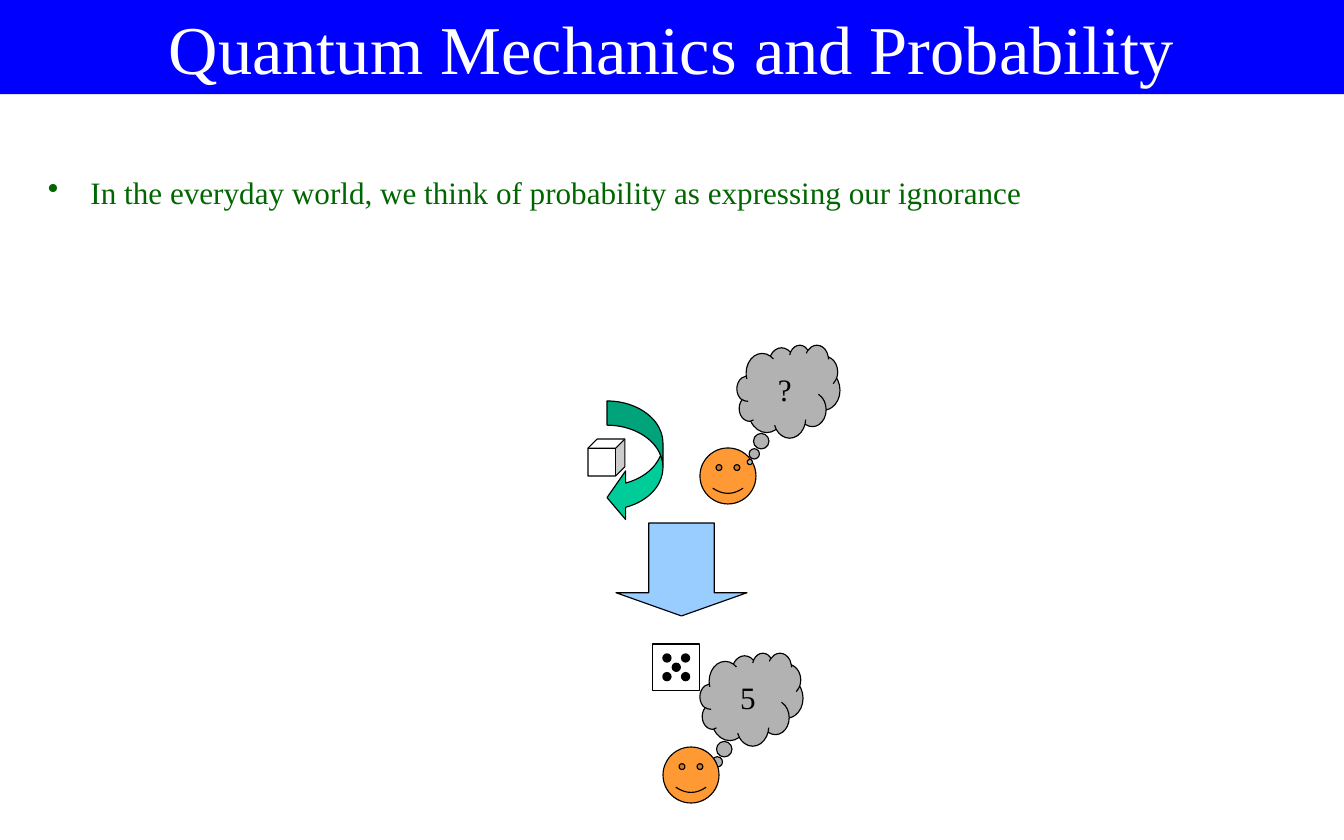
import pptx
import pptx.util
import pptx.dml.color
import pptx.enum.shapes
import pptx.enum.text
import lxml.etree

WIDTH, HEIGHT = 12, 7.5
FONT = "Times New Roman"
TITLE = "Quantum Mechanics and Probability"
STATEMENT = "In the everyday world, we think of probability as expressing our ignorance"
BLACK, WHITE = "000000", "FFFFFF"
KIND = pptx.enum.shapes.MSO_SHAPE
INCH = pptx.util.Inches

DIE_LEFT, DIE_TOP, DIE_STEP = 5.83, 5.75, 1 / 12
FIVE_PIPS = [(1, 1), (3, 1), (1, 3), (2, 2), (3, 3)]

SMILE = (KIND.SMILEY_FACE, 0.5, 0.5, "FF9933", [0.047])
THOUGHT = (KIND.CLOUD_CALLOUT, 0.92, 0.83, "B2B2B2", [-0.375, 0.76])
ROLL = (KIND.CURVED_LEFT_ARROW, 0.5, 1.08, "00CC99", [0.433, 0.867, 0.333])
CUBE = (KIND.CUBE, 0.33, 0.33, WHITE, [0.25])
RESULT = (KIND.DOWN_ARROW, 1.17, 0.83, "99CCFF", [0.5, 0.25])

SCENE = [
    (ROLL, 5.42, 3.58, ""),
    (CUBE, 5.25, 3.92, ""),
    (SMILE, 6.25, 4, ""),
    (THOUGHT, 6.58, 3.08, "?"),
    (THOUGHT, 6.25, 5.83, "5"),
    (RESULT, 5.5, 4.67, ""),
    (SMILE, 5.92, 6.67, ""),
]


def color(value):
    return pptx.dml.color.RGBColor.from_string(value)


def add_shape(shapes, kind, left, top, width, height, fill, line=BLACK):
    shape = shapes.add_shape(kind, INCH(left), INCH(top), INCH(width), INCH(height))
    shape.shadow.inherit = False
    shape.fill.solid()
    shape.fill.fore_color.rgb = color(fill)
    if line:
        shape.line.color.rgb = color(line)
        shape.line.width = pptx.util.Pt(0.75)
    else:
        shape.line.fill.background()
    return shape


def write(box, text, size, ink, align=pptx.enum.text.PP_ALIGN.CENTER):
    box.text_frame.word_wrap = True
    para = box.text_frame.paragraphs[0]
    para.text = text
    para.alignment = align
    para.font.name = FONT
    para.font.size = pptx.util.Pt(size)
    para.font.color.rgb = color(ink)
    return para


def add_bullet(para, indent):
    properties = para._p.get_or_add_pPr()
    properties.set("marL", str(INCH(indent)))
    properties.set("indent", str(-INCH(indent)))
    bullet = lxml.etree.Element(pptx.oxml.ns.qn("a:buChar"), char="•")
    properties.insert_element_before(bullet, "a:tabLst", "a:defRPr", "a:extLst")


def main():
    deck = pptx.Presentation()
    deck.slide_width, deck.slide_height = INCH(WIDTH), INCH(HEIGHT)
    page = deck.slides.add_slide(deck.slide_layouts[6])

    banner = add_shape(page.shapes, KIND.RECTANGLE, 0, 0, WIDTH, 0.84, "0000FF", None)
    write(banner, TITLE, 44, WHITE)

    box = page.shapes.add_textbox(INCH(0.33), INCH(1.5), INCH(11.5), INCH(0.44))
    para = write(box, STATEMENT, 20, "006600", pptx.enum.text.PP_ALIGN.LEFT)
    add_bullet(para, 0.38)

    die = page.shapes.add_group_shape()
    side = 5 * DIE_STEP
    add_shape(die.shapes, KIND.RECTANGLE, DIE_LEFT, DIE_TOP, side, side, WHITE)
    for column, row in FIVE_PIPS:
        left, top = DIE_LEFT + column * DIE_STEP, DIE_TOP + row * DIE_STEP
        add_shape(die.shapes, KIND.OVAL, left, top, DIE_STEP, DIE_STEP, BLACK, None)

    for (kind, width, height, fill, adjustments), left, top, text in SCENE:
        shape = add_shape(page.shapes, kind, left, top, width, height, fill)
        for index, value in enumerate(adjustments):
            shape.adjustments[index] = value
        if text:
            write(shape, text, 20, BLACK)

    deck.save("out.pptx")


if __name__ == "__main__":
    main()
